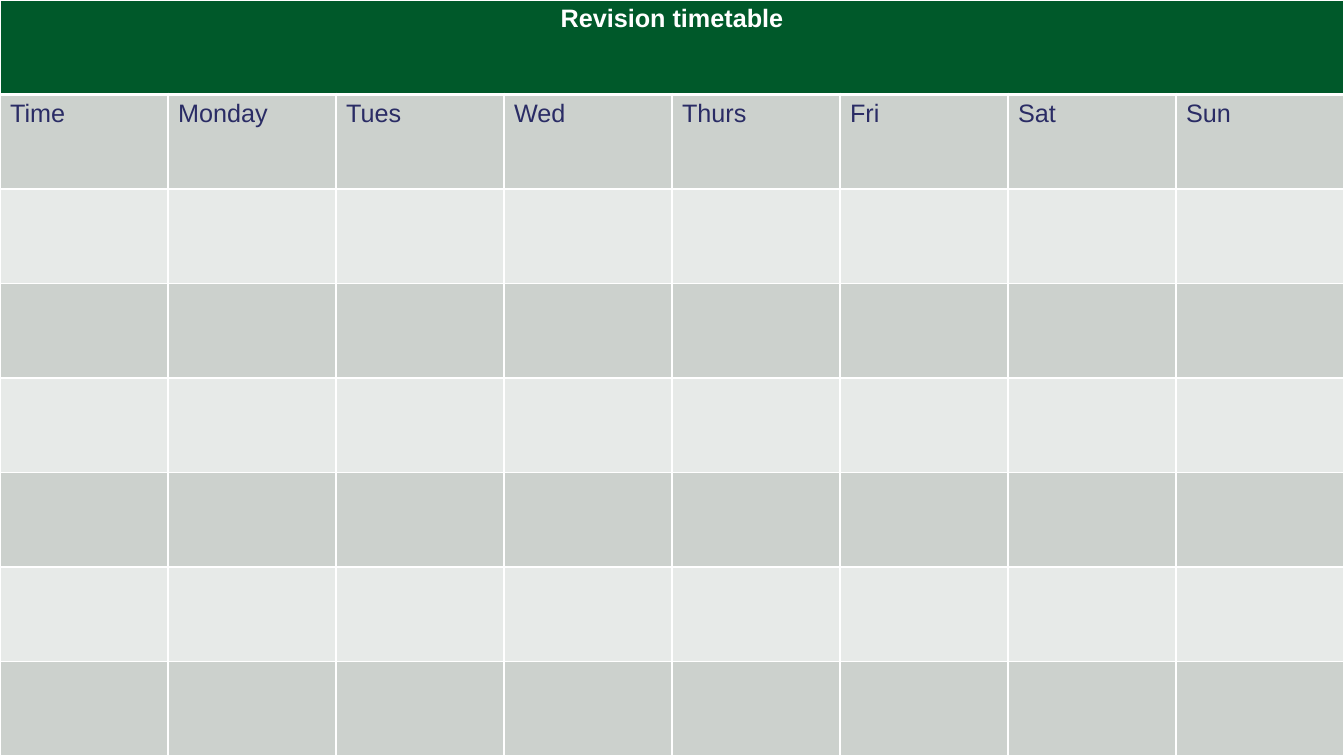
from lxml.etree import SubElement
from pptx import Presentation
from pptx.dml.color import RGBColor
from pptx.enum.text import PP_ALIGN
from pptx.oxml.ns import qn
from pptx.util import Inches, Pt

GREEN = RGBColor(0x00, 0x59, 0x2A)
DARK_BAND = RGBColor(0xCC, 0xD1, 0xCD)
LIGHT_BAND = RGBColor(0xE7, 0xEA, 0xE8)
NAVY = RGBColor(0x2A, 0x2C, 0x65)
WHITE = RGBColor(0xFF, 0xFF, 0xFF)

HEADINGS = ["Time", "Monday", "Tues", "Wed", "Thurs", "Fri", "Sat", "Sun"]
ROWS, COLUMNS = 8, len(HEADINGS)


def write(cell, text, color=NAVY, bold=False, align=PP_ALIGN.LEFT):
    paragraph = cell.text_frame.paragraphs[0]
    paragraph.alignment = align
    run = paragraph.add_run()
    run.text = text
    run.font.name = "Arial"
    run.font.size = Pt(18)
    run.font.bold = bold
    run.font.color.rgb = color


def draw_borders(cell, **widths):
    """Draw white cell edges; widths in points are keyed L, R, T and B."""
    properties = cell._tc.get_or_add_tcPr()
    for side, width in widths.items():
        edge = SubElement(properties, qn(f"a:ln{side}"), w=str(Pt(width)))
        fill = SubElement(edge, qn("a:solidFill"))
        SubElement(fill, qn("a:srgbClr"), val=str(WHITE))


prs = Presentation()
prs.slide_width, prs.slide_height = Inches(13.33), Inches(7.5)
slide = prs.slides.add_slide(prs.slide_layouts[6])

timetable = slide.shapes.add_table(
    ROWS, COLUMNS, 0, 0, prs.slide_width, prs.slide_height
).table

for row in range(ROWS):
    for column in range(COLUMNS):
        cell = timetable.cell(row, column)
        # A heavier rule separates the title from the days
        draw_borders(cell, L=1, R=1, T=3 if row == 1 else 1, B=3 if row == 0 else 1)
        cell.fill.solid()
        if row == 0:
            cell.fill.fore_color.rgb = GREEN
        else:
            cell.fill.fore_color.rgb = DARK_BAND if row % 2 else LIGHT_BAND

title = timetable.cell(0, 0)
title.merge(timetable.cell(0, COLUMNS - 1))
write(title, "Revision timetable", color=WHITE, bold=True, align=PP_ALIGN.CENTER)

for column, heading in enumerate(HEADINGS):
    write(timetable.cell(1, column), heading)

prs.save("out.pptx")
